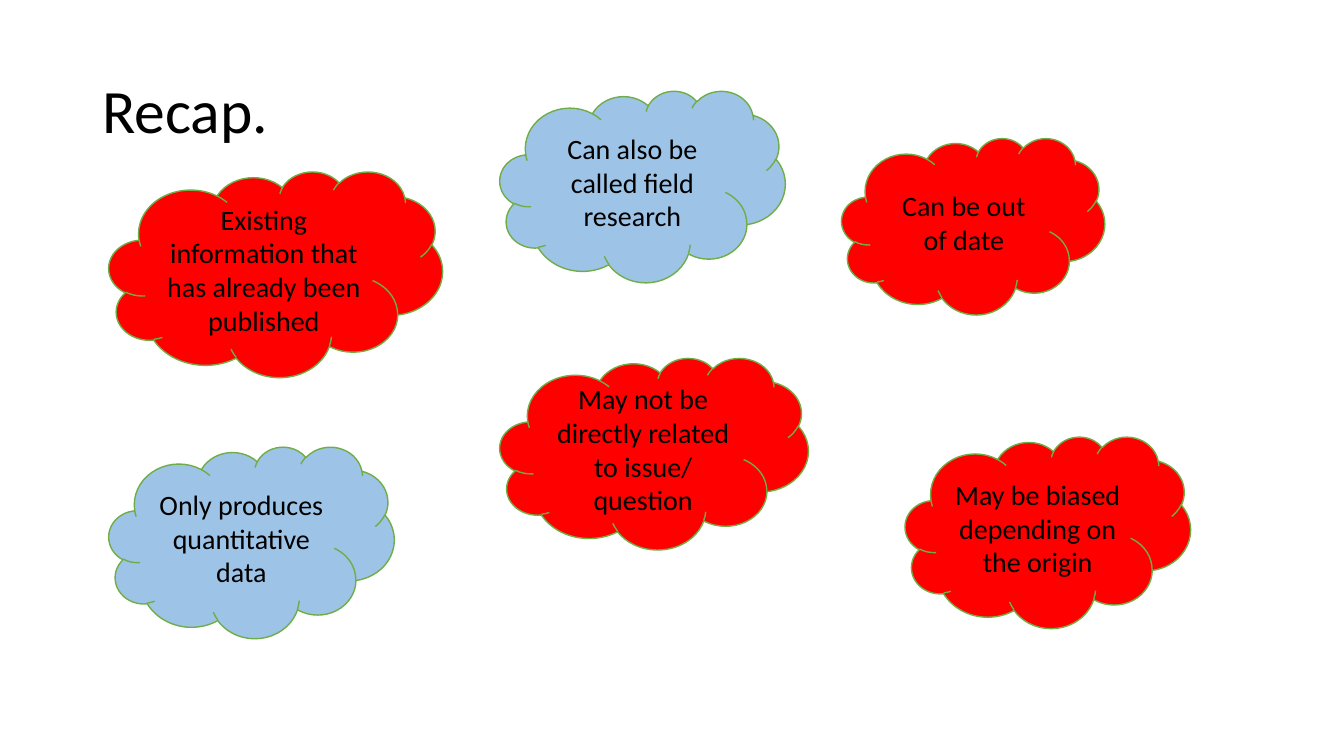
from pptx import Presentation
from pptx.dml.color import RGBColor
from pptx.enum.shapes import MSO_SHAPE
from pptx.enum.text import MSO_ANCHOR, PP_ALIGN
from pptx.util import Pt

RED = "FF0000"
BLUE = "9DC3E6"
GREEN = "70AD47"
BLACK = "000000"


def color(hex_string):
    return RGBColor.from_string(hex_string)


def write(shape, text, size, align):
    """Put one vertically centred, wrapping paragraph into the shape."""
    frame = shape.text_frame
    frame.word_wrap = True
    frame.vertical_anchor = MSO_ANCHOR.MIDDLE
    para = frame.paragraphs[0]
    para.text = text
    para.alignment = align
    para.font.name = "Calibri"
    para.font.size = Pt(size)
    para.font.color.rgb = color(BLACK)
    return para


deck = Presentation()
deck.slide_width = Pt(960)
deck.slide_height = Pt(540)
page = deck.slides.add_slide(deck.slide_layouts[6])

title = page.shapes.add_textbox(Pt(66), Pt(28.8), Pt(828), Pt(104.4))
title_para = write(title, "Recap.", 44, PP_ALIGN.LEFT)
title_para.line_spacing = 0.9

# left, top, width, height, fill, text
clouds = [
    (77.8, 122.4, 238.3, 146.9, RED, "Existing information that has already been published"),
    (357.1, 64.8, 203.8, 136.8, BLUE, "Can also be called field research"),
    (601.2, 98.6, 187.9, 126, RED, "Can be out of date"),
    (357.1, 255.6, 220.3, 136.8, RED, "May not be directly related to issue/ question"),
    (646.6, 311.8, 203.8, 136.8, RED, "May be biased depending on the origin"),
    (77.8, 319, 203.8, 136.8, BLUE, "Only produces quantitative data"),
]
for left, top, width, height, fill, text in clouds:
    cloud = page.shapes.add_shape(
        MSO_SHAPE.CLOUD, Pt(left), Pt(top), Pt(width), Pt(height))
    cloud.shadow.inherit = False
    cloud.fill.solid()
    cloud.fill.fore_color.rgb = color(fill)
    cloud.line.color.rgb = color(GREEN)
    cloud.line.width = Pt(1)
    write(cloud, text, 20, PP_ALIGN.CENTER)

deck.save("out.pptx")
